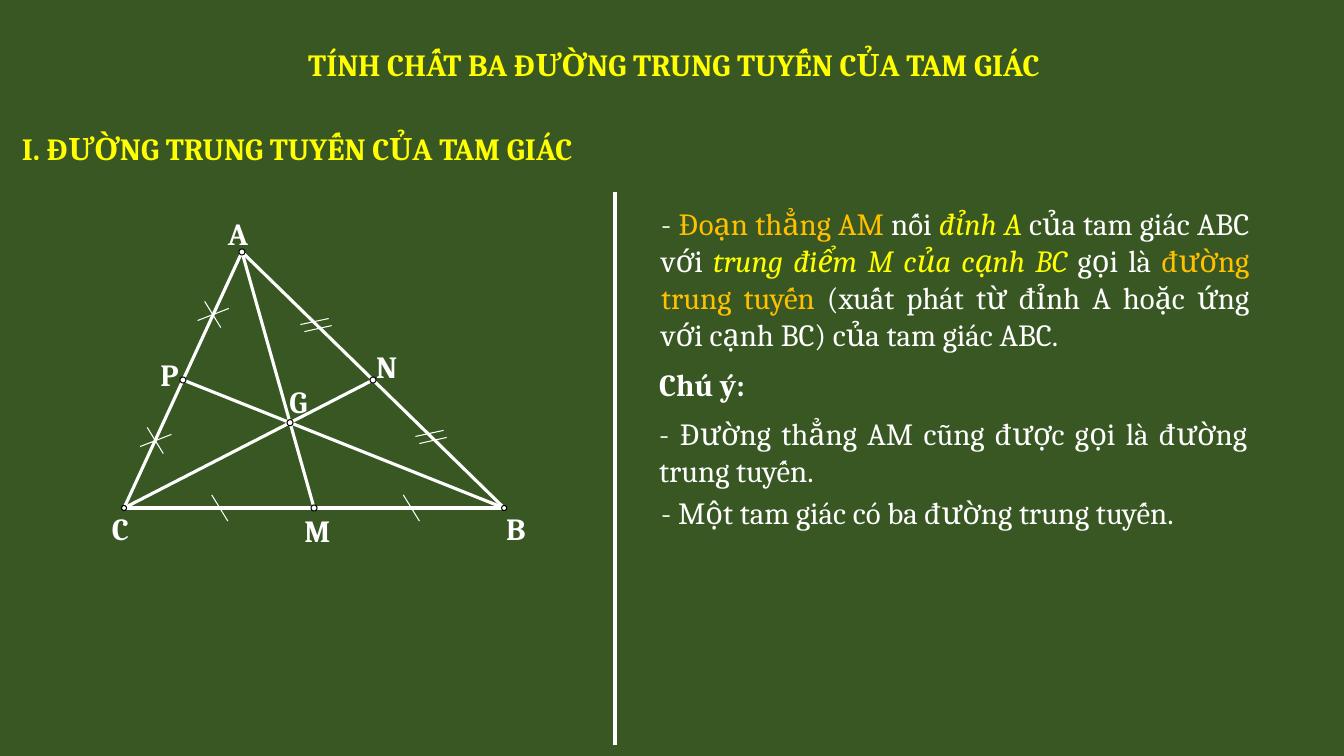
from lxml.etree import SubElement
from pptx import Presentation
from pptx.dml.color import RGBColor
from pptx.enum.shapes import MSO_CONNECTOR, MSO_SHAPE
from pptx.enum.text import MSO_ANCHOR, MSO_AUTO_SIZE, PP_ALIGN
from pptx.oxml.ns import qn
from pptx.util import Inches, Pt

GREEN = RGBColor(0x38, 0x57, 0x23)
WHITE = RGBColor(0xFF, 0xFF, 0xFF)
YELLOW = RGBColor(0xFF, 0xFF, 0x00)
ORANGE = RGBColor(0xFF, 0xC0, 0x00)
BLACK = RGBColor(0, 0, 0)

PLAIN = {"color": WHITE}
BOLD = {"color": WHITE, "bold": True}
HEADING = {"color": YELLOW, "bold": True}
TERM = {"color": ORANGE}
KEY = {"color": YELLOW, "italic": True}


class Board:
    """Draws the lesson's text and geometry on one slide in a shared style."""

    def __init__(self, slide):
        self.slide = slide
        self.font = {"name": "Cambria", "size": Pt(22)}
        slide.background.fill.solid()
        slide.background.fill.fore_color.rgb = GREEN

    def fill_text(self, holder, runs, wrap=True, inset=None, align=PP_ALIGN.LEFT, spacing=None):
        frame = holder.text_frame
        layout = {"word_wrap": wrap, "auto_size": MSO_AUTO_SIZE.SHAPE_TO_FIT_TEXT,
                  "vertical_anchor": MSO_ANCHOR.TOP}
        if inset is not None:
            for side in ("left", "top", "right", "bottom"):
                layout[f"margin_{side}"] = Inches(inset)
        for key, value in layout.items():
            setattr(frame, key, value)
        paragraph = frame.paragraphs[0]
        paragraph.alignment = align
        if spacing:
            paragraph.line_spacing = spacing
        for words, look in runs:
            run = paragraph.add_run()
            run.text = words
            emphasis = {key: value for key, value in look.items() if key != "color"}
            for key, value in {"bold": False, **self.font, **emphasis}.items():
                setattr(run.font, key, value)
            run.font.color.rgb = look["color"]

    def title(self, box, words):
        heading = self.slide.shapes.title
        for side, length in zip(("left", "top", "width", "height"), box):
            setattr(heading, side, Inches(length))
        self.fill_text(heading, [(words, HEADING)], wrap=False, align=PP_ALIGN.CENTER, spacing=1.5)

    def text(self, box, runs, **options):
        self.fill_text(self.slide.shapes.add_textbox(*map(Inches, box)), runs, **options)

    def line(self, start, end, weight=2.25, parent=None):
        shapes = (parent or self.slide).shapes
        stroke = shapes.add_connector(MSO_CONNECTOR.STRAIGHT, *map(Inches, (*start, *end)))
        stroke.line.color.rgb = WHITE
        stroke.line.width = Pt(weight)
        SubElement(stroke._element.spPr, qn("a:effectLst"))

    def dot(self, centre, size, outline):
        corner = [Inches(c - size / 2) for c in centre]
        point = self.slide.shapes.add_shape(MSO_SHAPE.OVAL, *corner, Inches(size), Inches(size))
        point.shadow.inherit = False
        point.fill.solid()
        point.fill.fore_color.rgb = WHITE
        point.line.color.rgb = BLACK
        point.line.width = Pt(outline)

    def mark(self, centre, strokes):
        group = self.slide.shapes.add_group_shape()
        x, y = centre
        for x1, y1, x2, y2 in strokes:
            self.line((x + x1, y + y1), (x + x2, y + y2), 0.75, group)


def midpoint(first, second):
    return tuple((p + q) / 2 for p, q in zip(first, second))


def draw_triangle(board):
    a, b, c = (2.4, 2.5), (5, 5.04), (1.23, 5.04)
    m, n, p = midpoint(b, c), midpoint(a, b), midpoint(a, c)
    g = tuple(sum(axis) / 3 for axis in zip(a, b, c))
    for start, end in [(b, p), (n, c), (c, b), (c, a), (a, b), (m, a)]:
        board.line(start, end)

    single = [(-0.08, -0.13, 0.08, 0.13)]
    double = [(-0.16, 0, 0.12, -0.06), (-0.12, 0.07, 0.15, 0.01)]
    cross = [(-0.08, -0.13, 0.08, 0.13), (0.16, -0.06, -0.15, 0.06)]
    for strokes, centres in [(single, [(2.18, 5.04), (4.08, 5.04)]),
                             (double, [(3.14, 3.22), (4.28, 4.33)]),
                             (cross, [(2.11, 3.12), (1.54, 4.37)])]:
        for centre in centres:
            board.mark(centre, strokes)

    for vertex in (b, c):
        board.dot(vertex, 0.05, 0.75)
    for point in (a, m, n, p, g):
        board.dot(point, 0.06, 0)
    for letter, left, top, width in [("A", 2.26, 2.13, 0.2), ("B", 5.02, 5.06, 0.2),
                                     ("C", 1.11, 5.06, 0.18), ("M", 3.02, 5.08, 0.26),
                                     ("N", 3.73, 3.45, 0.21), ("P", 1.59, 3.53, 0.19),
                                     ("G", 2.87, 3.8, 0.2)]:
        board.text((left, top, width, 0.37), [(letter, BOLD)], wrap=False, inset=0)


def add_lesson_text(board):
    board.title((2.86, 0.22, 7.65, 0.59), "TÍNH CHẤT BA ĐƯỜNG TRUNG TUYẾN CỦA TAM GIÁC")
    board.text((0.12, 1.05, 5.97, 0.59),
               [("I. ĐƯỜNG TRUNG TUYẾN CỦA TAM GIÁC", HEADING)], spacing=1.5)
    board.line((6.1, 1.9), (6.1, 7.39))
    definition = [
        ("- ", PLAIN), ("Đoạn thẳng AM ", TERM), ("nối ", PLAIN), ("đỉnh A ", KEY),
        ("của tam giác ABC với ", PLAIN), ("trung điểm M của cạnh BC ", KEY),
        ("gọi là ", PLAIN), ("đường trung tuyến ", TERM),
        ("(xuất phát từ đỉnh A hoặc ứng với cạnh BC) của tam giác ABC.", PLAIN),
    ]
    board.text((6.46, 1.98, 6.03, 1.58), definition, align=PP_ALIGN.JUSTIFY)
    board.text((6.44, 3.58, 1.06, 0.47), [("Chú ý:", BOLD)], wrap=False)
    for box, note in [
        ((6.44, 4.07, 6.03, 0.84), "- Đường thẳng AM cũng được gọi là đường trung tuyến."),
        ((6.46, 4.85, 5.4, 0.47), "- Một tam giác có ba đường trung tuyến."),
    ]:
        board.text(box, [(note, PLAIN)], align=PP_ALIGN.JUSTIFY)


def main():
    lesson = Presentation()
    lesson.slide_width, lesson.slide_height = Inches(13.33), Inches(7.5)
    board = Board(lesson.slides.add_slide(lesson.slide_layouts[5]))
    add_lesson_text(board)
    draw_triangle(board)
    lesson.save("out.pptx")


if __name__ == "__main__":
    main()
